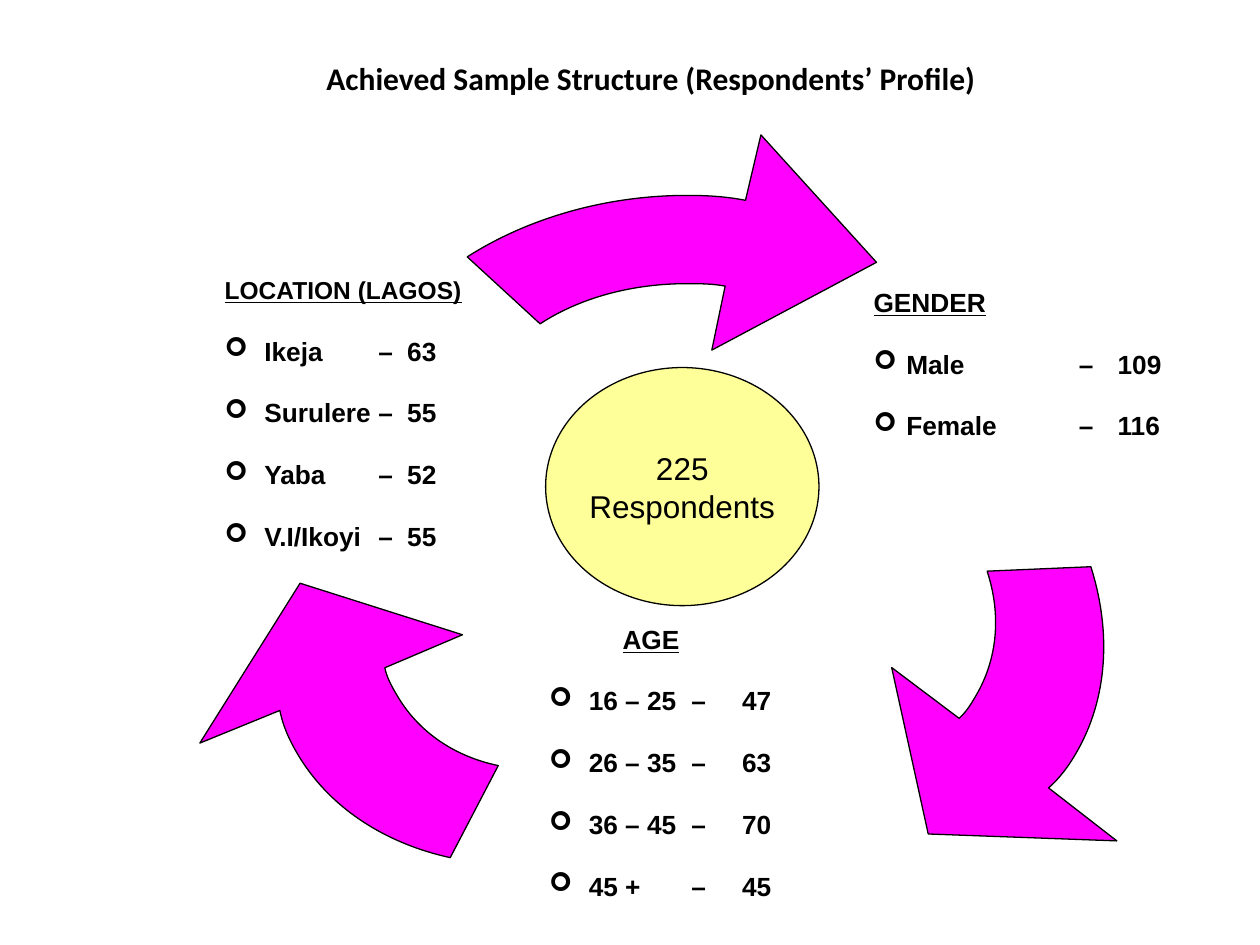
from dataclasses import dataclass

from lxml import etree
from pptx import Presentation
from pptx.dml.color import RGBColor
from pptx.enum.shapes import MSO_SHAPE
from pptx.enum.text import MSO_ANCHOR, PP_ALIGN
from pptx.oxml.ns import qn
from pptx.util import Cm, Pt

ELLIPSE = MSO_SHAPE.OVAL
TOP, MIDDLE = MSO_ANCHOR.TOP, MSO_ANCHOR.MIDDLE
LEFT, CENTER = PP_ALIGN.LEFT, PP_ALIGN.CENTER
BLACK = RGBColor(0, 0, 0)
MAGENTA = RGBColor(0xFF, 0, 0xFF)
YELLOW = RGBColor(0xFF, 0xFF, 0x99)

# Arrow outline in cm from the centre of the cycle: one point = line, three = curve
CYCLE_W, CYCLE_H = 13.79, 10.54
ARROW_PARTS = [
    [(0.77, -3.44)],
    [(0.52, -3.49), (0.24, -3.49), (0, -3.49)],
    [(-1.1, -3.49), (-2.15, -3.21), (-2.96, -2.68)],
    [(-4.43, -4.03)],
    [(-3.21, -4.81), (-1.64, -5.27), (0, -5.27)],
    [(0.39, -5.27), (0.77, -5.25), (1.18, -5.17)],
    [(1.49, -6.49)],
    [(3.82, -3.92)],
    [(0.5, -2.15)],
]


@dataclass
class Arrow:
    x: float
    y: float
    width: float
    height: float
    angle: int


@dataclass
class Profile:
    heading: str
    rows: list[tuple[str, str]]
    box: tuple[float, float, float, float]
    indent: float
    tabs: tuple[float, float]
    heading_size: int = 15
    heading_indent: float = 0


ARROWS = [
    Arrow(13.85, 9.21, CYCLE_W, CYCLE_H, 0),
    Arrow(15.73, 11.72, CYCLE_H, CYCLE_W, 120),
    Arrow(11.95, 11.72, CYCLE_H, CYCLE_W, 240),
]
PROFILES = [
    Profile("GENDER", [("Male", "109"), ("Female", "116")],
            (17.61, 5.77, 6.1, 4.24), 0.66, (4.14, 4.92)),
    Profile("AGE", [("16 – 25", "47"), ("26 – 35", "63"),
                    ("36 – 45", "70"), ("45 +", "45")],
            (11.07, 12.56, 5.54, 5.8), 0.8, (2.87, 3.89), heading_indent=1.48),
    Profile("LOCATION (LAGOS)", [("Ikeja", "63"), ("Surulere", "55"),
                                 ("Yaba", "52"), ("V.I/Ikoyi", "55")],
            (4.53, 5.55, 5.54, 5.7), 0.8, (3.1, 3.68), heading_size=14),
]


def set_all(target, values: dict) -> None:
    for name, value in values.items():
        setattr(target, name, value)


def add_run(p, text: str, size: int, font: str = "Arial", **style) -> None:
    r = p.add_run()
    r.text = text
    set_all(r.font, {"name": font, "size": Pt(size), **style})
    r.font.color.rgb = BLACK


def paint(sp, color: RGBColor) -> None:
    sp.shadow.inherit = False
    sp.fill.solid()
    sp.fill.fore_color.rgb = color
    sp.line.color.rgb = BLACK
    sp.line.width = Pt(0.75)


def draw_outline(sp) -> None:
    """Give the freeform its lines and curves, measured in the cycle's box."""
    outline = sp._element.find(".//" + qn("a:path"))
    for child in list(outline):
        outline.remove(child)
    outline.set("w", str(Cm(CYCLE_W)))
    outline.set("h", str(Cm(CYCLE_H)))
    for i, part in enumerate(ARROW_PARTS):
        tag = "a:moveTo" if i == 0 else "a:lnTo" if len(part) == 1 else "a:cubicBezTo"
        segment = etree.SubElement(outline, qn(tag))
        for x, y in part:
            etree.SubElement(segment, qn("a:pt"), x=str(Cm(x + CYCLE_W / 2)),
                             y=str(Cm(y + CYCLE_H / 2)))
    etree.SubElement(outline, qn("a:close"))


def add_arrow(s, arrow: Arrow) -> None:
    builder = s.shapes.build_freeform()
    builder.add_line_segments([(Cm(CYCLE_W), Cm(CYCLE_H))], close=True)
    sp = builder.convert_to_shape()
    draw_outline(sp)
    set_all(sp, {"left": Cm(arrow.x - arrow.width / 2), "top": Cm(arrow.y - arrow.height / 2),
                 "width": Cm(arrow.width), "height": Cm(arrow.height),
                 "rotation": arrow.angle})
    paint(sp, MAGENTA)


def format_row(p, indent: float, tabs: tuple[float, float]) -> None:
    pPr = p._p.get_or_add_pPr()
    pPr.set("marL", str(Cm(indent)))
    pPr.set("indent", str(-Cm(indent)))
    etree.SubElement(pPr, qn("a:buFont"), typeface="Wingdings", charset="2")
    etree.SubElement(pPr, qn("a:buChar"), char="➢")
    tab_list = etree.SubElement(pPr, qn("a:tabLst"))
    for tab in tabs:
        etree.SubElement(tab_list, qn("a:tab"), pos=str(Cm(tab)), algn="l")


def add_profile(s, profile: Profile) -> None:
    tf = s.shapes.add_textbox(*map(Cm, profile.box)).text_frame
    set_all(tf, {"word_wrap": True, "vertical_anchor": TOP, "margin_left": 0,
                 "margin_right": 0, "margin_top": 0, "margin_bottom": 0})
    p = tf.paragraphs[0]
    p._p.get_or_add_pPr().set("marL", str(Cm(profile.heading_indent)))
    add_run(p, profile.heading, profile.heading_size, bold=True, underline=True)
    for label, count in profile.rows:
        p = tf.add_paragraph()
        p.space_before = Pt(17.25)
        format_row(p, profile.indent, profile.tabs)
        add_run(p, f"{label}\t–\t{count}", 15, bold=True)


def add_total(s) -> None:
    sp = s.shapes.add_shape(ELLIPSE, Cm(11), Cm(7.41), Cm(5.51), Cm(4.8))
    paint(sp, YELLOW)
    tf = sp.text_frame
    set_all(tf, {"word_wrap": False, "vertical_anchor": MIDDLE})
    for p, text in ((tf.paragraphs[0], "225"), (tf.add_paragraph(), "Respondents")):
        p.alignment = CENTER
        add_run(p, text, 18)


def add_title(s) -> None:
    title = s.shapes.title
    set_all(title, {"left": Cm(2.74), "top": Cm(1.07), "width": Cm(21.16), "height": Cm(1.02)})
    tf = title.text_frame
    set_all(tf, {"word_wrap": True, "vertical_anchor": MIDDLE, "margin_left": Cm(3.84)})
    p = tf.paragraphs[0]
    p.alignment = LEFT
    add_run(p, "Achieved Sample Structure (Respondents’ Profile)", 18, "Calibri", bold=True)


def main() -> None:
    prs = Presentation()
    prs.slide_width, prs.slide_height = Cm(25.4), Cm(19.05)
    s = prs.slides.add_slide(prs.slide_layouts[5])
    add_title(s)
    # Cycle of arrows with the three profiles around it
    for arrow in ARROWS:
        add_arrow(s, arrow)
    for profile in PROFILES:
        add_profile(s, profile)
    # Total in the middle
    add_total(s)
    prs.save("out.pptx")


if __name__ == "__main__":
    main()
